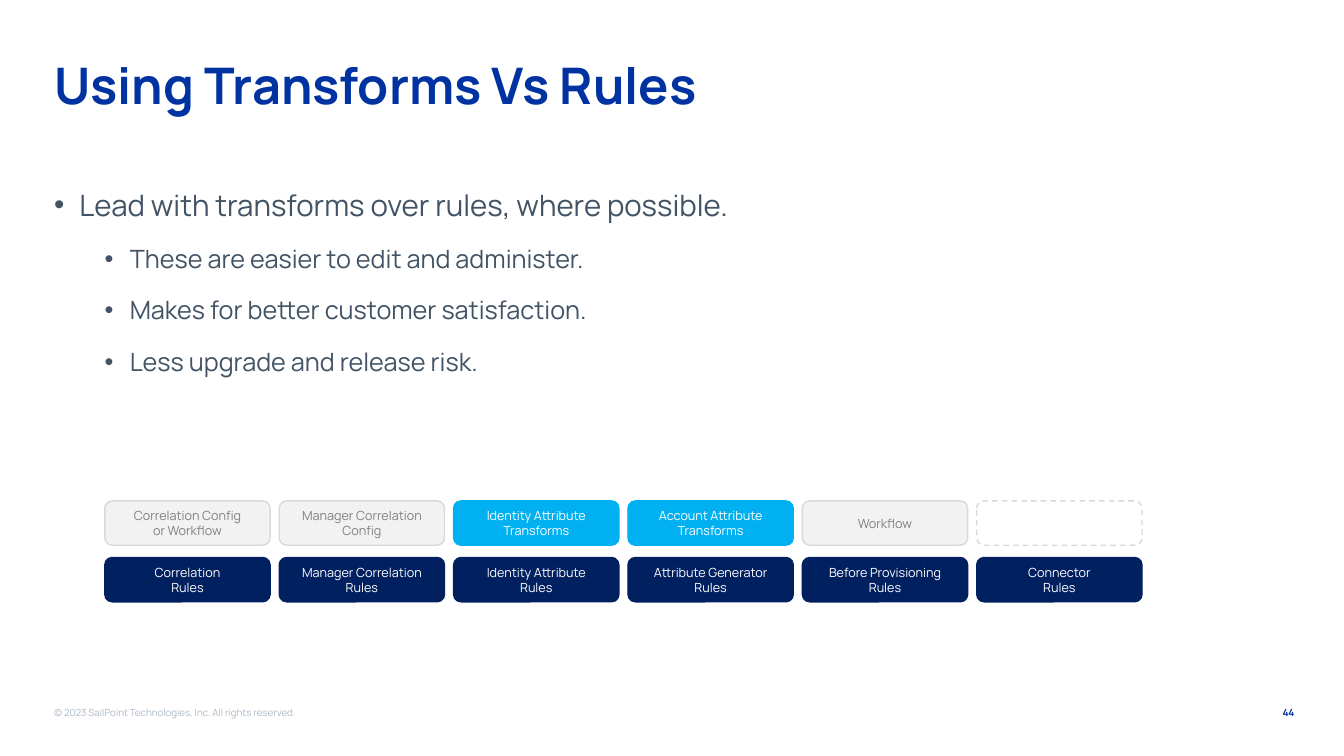
from dataclasses import dataclass, field
from typing import Any

from lxml.etree import SubElement
from pptx import Presentation
from pptx.dml.color import RGBColor
from pptx.enum.dml import MSO_LINE
from pptx.enum.shapes import MSO_SHAPE
from pptx.enum.text import MSO_ANCHOR, PP_ALIGN
from pptx.oxml.ns import qn
from pptx.slide import Slide
from pptx.util import Pt

FONT_NAME = "Manrope"
MARGIN_LEFT = 31.7
FOOTER_TOP = 499.7
GRID_LEFT = 74.9
COLUMN_PITCH = 124.56
BOX_WIDTH = 118.1
BOX_HEIGHT = 31.7
ALTERNATIVES_TOP = 357.8
RULES_TOP = 398.2
BULLET_HANGING = 18


@dataclass
class TextStyle:
    size: float
    color: str
    bold: bool = False
    format: dict[str, Any] = field(default_factory=dict)


@dataclass
class Label:
    text: str
    left: float
    top: float
    width: float
    height: float
    style: TextStyle


@dataclass
class Bullet:
    text: str
    size: float
    indent: float


@dataclass
class BoxStyle:
    fill: str | None
    line: str
    text: str


@dataclass
class Box:
    text: str
    style: BoxStyle


CENTERED = {"alignment": PP_ALIGN.CENTER}
FOOTER = {"space_after": Pt(6)}
LABELS = [
    Label("Using Transforms Vs Rules", MARGIN_LEFT, 28.8, 837.4, 62.6,
          TextStyle(36, "0033A1", True)),
    Label("44", 869, FOOTER_TOP, 62.6, 18,
          TextStyle(7, "0033A1", True, {"alignment": PP_ALIGN.RIGHT, **FOOTER})),
    Label("© 2023 SailPoint Technologies, Inc. All rights reserved.",
          MARGIN_LEFT, FOOTER_TOP, 305.3, 18, TextStyle(7, "ABBAC9", False, FOOTER)),
]
BULLETS = [
    Bullet("Lead with transforms over rules, where possible.", 21, 18),
    Bullet("These are easier to edit and administer.", 18, 54),
    Bullet("Makes for better customer satisfaction.", 18, 54),
    Bullet("Less upgrade and release risk.", 18, 54),
]
CONFIGURATION = BoxStyle("F2F2F2", "D9D9D9", "808080")
TRANSFORM = BoxStyle("00B0F0", "00B0F0", "FFFFFF")
RULE = BoxStyle("002060", "002060", "FFFFFF")
EMPTY = BoxStyle(None, "D9D9D9", "808080")
ALTERNATIVES = [
    Box("Correlation Config\nor Workflow", CONFIGURATION),
    Box("Manager Correlation\nConfig", CONFIGURATION),
    Box("Identity Attribute Transforms", TRANSFORM),
    Box("Account Attribute Transforms", TRANSFORM),
    Box("Workflow", CONFIGURATION),
    Box("", EMPTY),
]
RULES = [
    Box(f"{kind}\nRules", RULE)
    for kind in ("Correlation", "Manager Correlation", "Identity Attribute",
                 "Attribute Generator", "Before Provisioning", "Connector")
]


def color(value: str) -> RGBColor:
    return RGBColor.from_string(value)


def apply_format(target: Any, values: dict[str, Any]) -> None:
    for name, value in values.items():
        setattr(target, name, value)


def style_paragraph(paragraph: Any, style: TextStyle) -> None:
    apply_format(paragraph, style.format)
    for run in paragraph.runs:
        apply_format(run.font, {"name": FONT_NAME, "size": Pt(style.size), "bold": style.bold})
        run.font.color.rgb = color(style.color)


def draw_label(slide: Slide, label: Label) -> None:
    shape = slide.shapes.add_textbox(
        Pt(label.left), Pt(label.top), Pt(label.width), Pt(label.height))
    frame = shape.text_frame
    apply_format(frame, {"word_wrap": True, "vertical_anchor": MSO_ANCHOR.MIDDLE,
                         "text": label.text})
    style_paragraph(frame.paragraphs[0], label.style)


def draw_bullets(slide: Slide, bullets: list[Bullet]) -> None:
    shape = slide.shapes.add_textbox(Pt(MARGIN_LEFT), Pt(127.4), Pt(900), Pt(337))
    frame = shape.text_frame
    frame.word_wrap = True
    frame.text = "\n".join(bullet.text for bullet in bullets)
    for index, (paragraph, bullet) in enumerate(zip(frame.paragraphs, bullets)):
        properties = paragraph._p.get_or_add_pPr()
        properties.set("marL", str(Pt(bullet.indent)))
        properties.set("indent", str(-Pt(BULLET_HANGING)))
        SubElement(properties, qn("a:buFont"), typeface="Arial")
        SubElement(properties, qn("a:buChar"), char="•")
        spacing = {"level": 1 if index else 0, "line_spacing": 1.1,
                   "space_before": Pt(10 if index else 0), "space_after": Pt(3)}
        style_paragraph(paragraph, TextStyle(bullet.size, "415364", False, spacing))


def draw_box(slide: Slide, box: Box, left: float, top: float) -> None:
    shape = slide.shapes.add_shape(
        MSO_SHAPE.ROUNDED_RECTANGLE, Pt(left), Pt(top), Pt(BOX_WIDTH), Pt(BOX_HEIGHT))
    shape.shadow.inherit = False
    shape.line.color.rgb = color(box.style.line)
    shape.line.width = Pt(1)
    if box.style.fill:
        shape.fill.solid()
        shape.fill.fore_color.rgb = color(box.style.fill)
    else:
        shape.fill.background()
        shape.line.dash_style = MSO_LINE.DASH
    frame = shape.text_frame
    apply_format(frame, {"word_wrap": True, "vertical_anchor": MSO_ANCHOR.MIDDLE,
                         "text": box.text})
    for paragraph in frame.paragraphs:
        style_paragraph(paragraph, TextStyle(9, box.style.text, False, CENTERED))


def draw_row(slide: Slide, boxes: list[Box], top: float) -> None:
    for column, box in enumerate(boxes):
        draw_box(slide, box, GRID_LEFT + column * COLUMN_PITCH, top)


def main() -> None:
    presentation = Presentation()
    apply_format(presentation, {"slide_width": Pt(960), "slide_height": Pt(540)})
    slide = presentation.slides.add_slide(presentation.slide_layouts[6])
    for label in LABELS:
        draw_label(slide, label)
    draw_bullets(slide, BULLETS)
    draw_row(slide, ALTERNATIVES, ALTERNATIVES_TOP)
    draw_row(slide, RULES, RULES_TOP)
    presentation.save("out.pptx")


if __name__ == "__main__":
    main()
